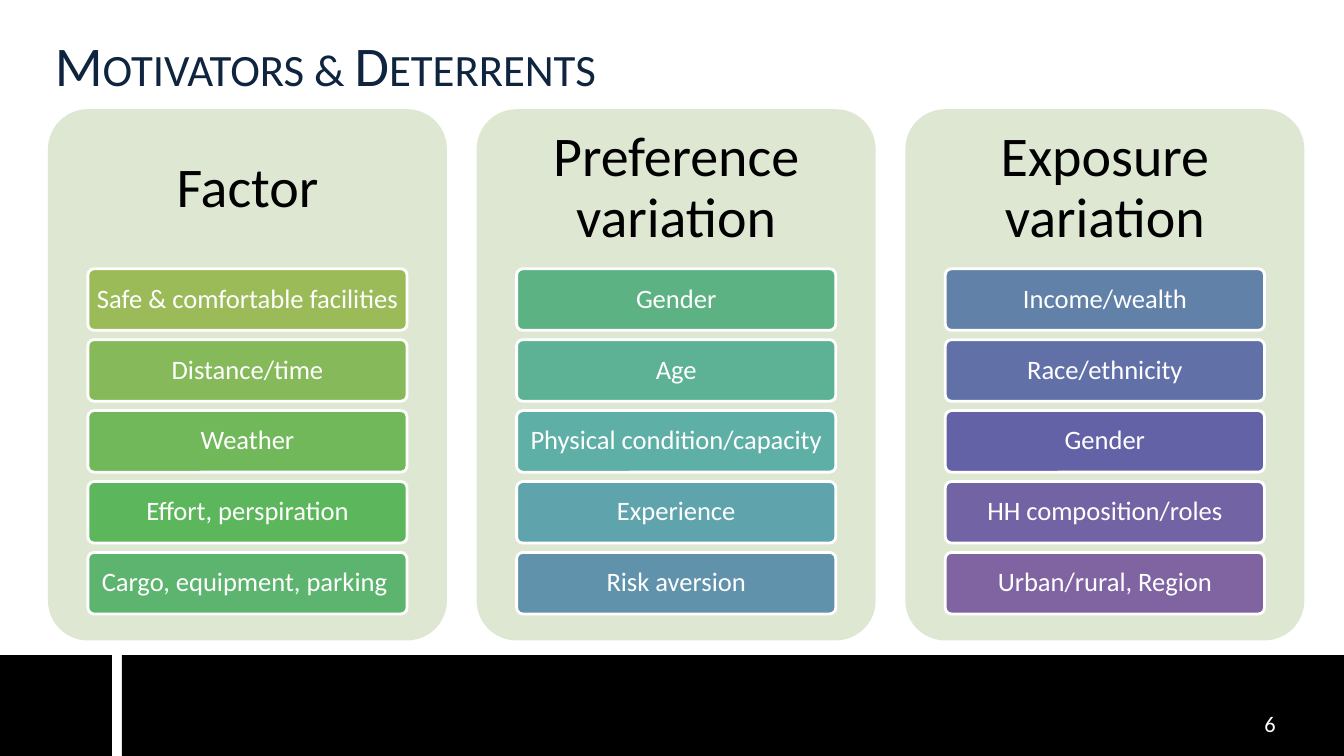
"""Builds the slide on motivators and deterrents: three panels of five labels."""
import colorsys

import pptx
import pptx.dml.color
import pptx.enum.shapes
import pptx.enum.text
import pptx.util

Pt = pptx.util.Pt
RGBColor = pptx.dml.color.RGBColor
SHAPE = pptx.enum.shapes.MSO_SHAPE
ALIGN = pptx.enum.text.PP_ALIGN
ANCHOR = pptx.enum.text.MSO_ANCHOR

BLACK = RGBColor(0x00, 0x00, 0x00)
WHITE = RGBColor(0xFF, 0xFF, 0xFF)
NAVY = RGBColor(0x0F, 0x24, 0x3E)
PALE_GREEN = RGBColor(0xDE, 0xE7, 0xD1)
FIRST_LABEL = RGBColor(0x9B, 0xBB, 0x59)
LAST_LABEL = RGBColor(0x80, 0x64, 0xA2)

PANELS = [
    ("Factor", ["Safe & comfortable facilities", "Distance/time", "Weather",
                "Effort, perspiration", "Cargo, equipment, parking "]),
    ("Preference variation", ["Gender", "Age", "Physical condition/capacity",
                              "Experience", "Risk aversion"]),
    ("Exposure variation", ["Income/wealth", "Race/ethnicity", "Gender",
                            "HH composition/roles", "Urban/rural, Region"]),
]


def write(holder, text, size, color, align=ALIGN.CENTER, anchor=ANCHOR.MIDDLE,
          inset=(7.2, 3.6), spacing=0.9):
    frame = holder.text_frame
    frame.word_wrap = True
    frame.auto_size = pptx.enum.text.MSO_AUTO_SIZE.NONE
    frame.vertical_anchor = anchor
    frame.margin_left = frame.margin_right = Pt(inset[0])
    frame.margin_top = frame.margin_bottom = Pt(inset[1])
    paragraph = frame.paragraphs[0]
    paragraph.alignment = align
    paragraph.line_spacing = spacing
    run = paragraph.add_run()
    run.text = text
    run.font.name = "Calibri"
    run.font.size = Pt(size)
    run.font.color.rgb = color
    return run


def add_block(kind, left, top, width, height, fill, corner=None, line=None):
    block = slide.shapes.add_shape(kind, Pt(left), Pt(top), Pt(width), Pt(height))
    block.shadow.inherit = False
    block.fill.solid()
    block.fill.fore_color.rgb = fill
    if corner is not None:
        block.adjustments[0] = corner
    if line is None:
        block.line.fill.background()
    else:
        block.line.color.rgb = line
        block.line.width = Pt(2)
    return block


deck = pptx.Presentation()
deck.slide_width, deck.slide_height = Pt(960), Pt(540)
slide = deck.slides.add_slide(deck.slide_layouts[5])

for left, right in [(0, 80), (87, 960)]:
    add_block(SHAPE.RECTANGLE, left, 468, right - left, 72, BLACK)

title = slide.shapes.title
title.left, title.top, title.width, title.height = Pt(32), Pt(12.5), Pt(896), Pt(66)
heading = write(title, "Motivators & Deterrents", 40, NAVY, align=ALIGN.LEFT, spacing=1)
heading.font._element.set("cap", "small")

page_number = slide.shapes.add_textbox(Pt(896), Pt(504), Pt(64), Pt(36))
write(page_number, "6", 16, WHITE, align=ALIGN.LEFT, anchor=ANCHOR.TOP, spacing=1)

first_hls, last_hls = (colorsys.rgb_to_hls(*(part / 255 for part in color))
                       for color in (FIRST_LABEL, LAST_LABEL))
label_count = sum(len(labels) for _, labels in PANELS)
label_index = 0

for column, (header, labels) in enumerate(PANELS):
    panel_left = 34.3 + 306.2 * column
    add_block(SHAPE.ROUNDED_RECTANGLE, panel_left, 78, 285, 379.5, PALE_GREEN, corner=0.1)
    header_box = slide.shapes.add_textbox(Pt(panel_left), Pt(78), Pt(285), Pt(114))
    write(header_box, header, 40, BLACK, inset=(12, 12))
    for row, label in enumerate(labels):
        share = label_index / (label_count - 1)
        hls = [a + (b - a) * share for a, b in zip(first_hls, last_hls)]
        fill = RGBColor(*(round(part * 255) for part in colorsys.hls_to_rgb(*hls)))
        label_block = add_block(SHAPE.ROUNDED_RECTANGLE, panel_left + 28.5,
                                192 + 50.65 * row, 228, 44, fill, corner=0.1, line=WHITE)
        write(label_block, label, 19, WHITE, inset=(3.6, 2.9))
        label_index += 1

deck.save("out.pptx")
